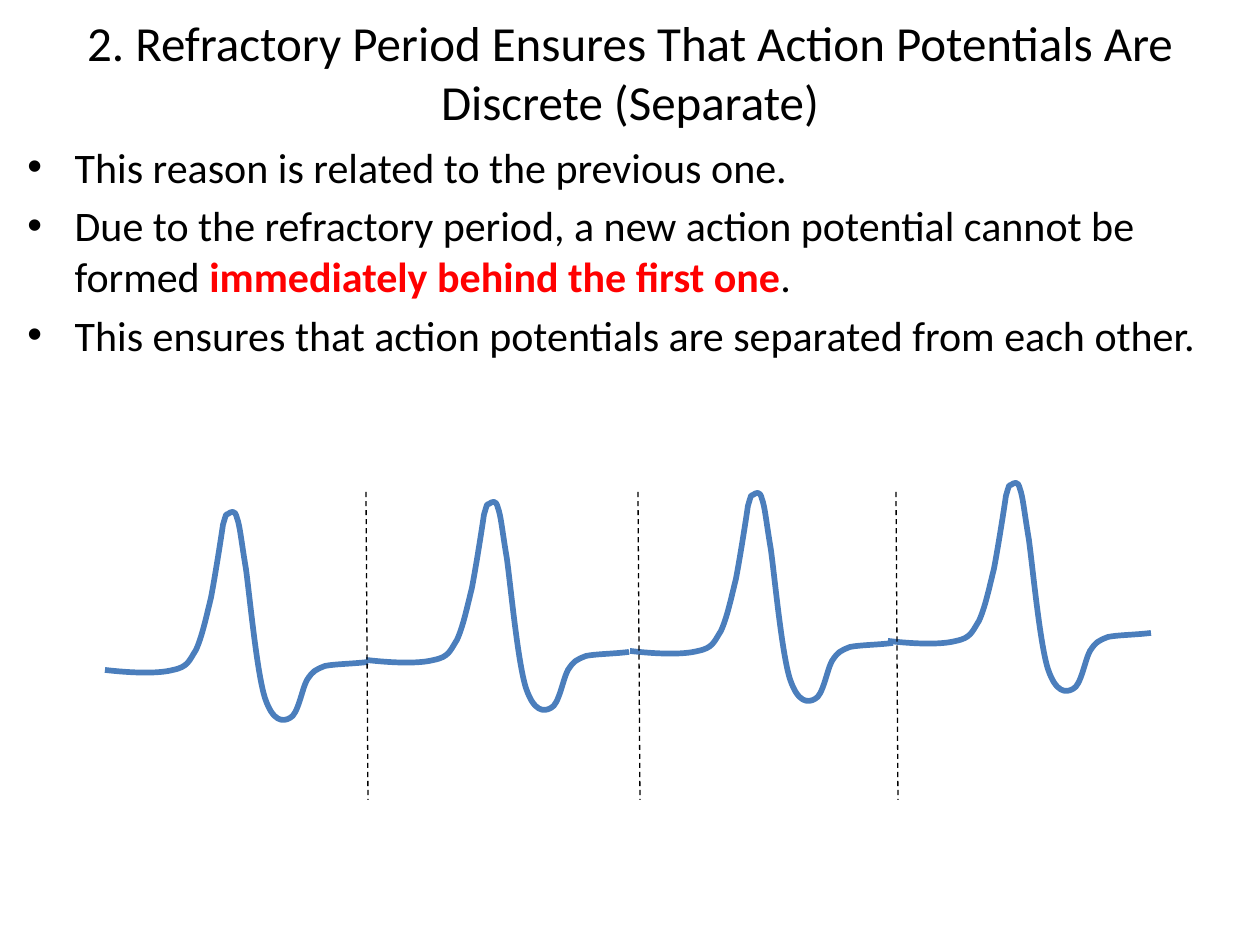
from lxml import etree
from pptx import Presentation
from pptx import util as u
from pptx.dml.color import RGBColor
from pptx.enum import dml, shapes, text
from pptx.oxml.ns import qn

PX = 914400 / 126
COLORS = {"text": "000000", "accent": "FF0000", "wave": "4B7EBC"}
FONT = "Calibri"

TITLE = "2. Refractory Period Ensures That Action Potentials Are Discrete (Separate)"
BULLETS = [
    [("This reason is related to the previous one.", False)],
    [("Due to the refractory period, a new action potential cannot be formed ", False),
     ("immediately behind the first one", True),
     (".", False)],
    [("This ensures that action potentials are separated from each other.", False)],
]

# Bezier triples (two controls, one end) in px from the start of a wave
WAVE_CURVES = [
    [(26, 3), (53, 4), (68, 0)],
    [(83, -3), (84, -9), (91, -20)],
    [(97, -33), (101, -52), (106, -72)],
    [(110, -93), (116, -131), (118, -145)],
    [(122, -159), (121, -155), (123, -156)],
    [(126, -158), (130, -161), (132, -152)],
    [(135, -144), (136, -131), (141, -101)],
    [(145, -71), (152, 3), (160, 28)],
    [(168, 52), (178, 52), (185, 48)],
    [(193, 45), (197, 19), (202, 10)],
    [(208, 1), (210, 0), (220, -4)],
    [(230, -6), (247, -6), (263, -8)],
]
WAVE_STARTS = [(0, 178), (261, 168), (525, 159), (783, 149)]
DIVIDER_LEFTS = [261, 533, 791]


def px(length):
    return u.Emu(round(length * PX))


def color(name):
    return RGBColor.from_string(COLORS[name])


def set_all(target, values):
    for name, value in values.items():
        setattr(target, name, value)


def add_text_frame(page, box, anchor):
    frame = page.shapes.add_textbox(*map(px, box)).text_frame
    set_all(frame, {"word_wrap": True, "vertical_anchor": anchor})
    return frame


def add_span(para, words, size, accent=False):
    span = para.add_run()
    span.text = words
    set_all(span.font, {"name": FONT, "size": u.Pt(size), "bold": accent})
    span.font.color.rgb = color("accent" if accent else "text")


def add_title(page, box):
    para = add_text_frame(page, box, text.MSO_ANCHOR.MIDDLE).paragraphs[0]
    para.alignment = text.PP_ALIGN.CENTER
    add_span(para, TITLE, 28)


def add_bullets(page, box):
    frame = add_text_frame(page, box, text.MSO_ANCHOR.TOP)
    for index, spans in enumerate(BULLETS):
        para = frame.add_paragraph() if index else frame.paragraphs[0]
        para.space_before = u.Pt(4.8)
        props = para._p.get_or_add_pPr()
        props.set("marL", str(u.Inches(0.375)))
        props.set("indent", str(-u.Inches(0.375)))
        etree.SubElement(props, qn("a:buFont"), typeface="Arial")
        etree.SubElement(props, qn("a:buChar"), char="•")
        for words, accent in spans:
            add_span(para, words, 24, accent)


def add_wave(page, left, top):
    """Draw one action potential as a smooth open outline."""
    points = [(left + x, top + y) for curve in WAVE_CURVES for x, y in curve]
    builder = page.shapes.build_freeform(left, top, scale=PX)
    wave = builder.add_line_segments(points, close=False).convert_to_shape()
    segments = list(wave._element.iter(qn("a:lnTo")))
    for first in range(0, len(segments), 3):
        curve = etree.Element(qn("a:cubicBezTo"))
        segments[first].addprevious(curve)
        for segment in segments[first:first + 3]:
            curve.append(segment[0])
            segment.getparent().remove(segment)
    wave.shadow.inherit = False
    wave.fill.background()
    wave.line.color.rgb = color("wave")
    wave.line.width = u.Pt(3.25)


def add_divider(page, left, top, height):
    ends = map(px, (left, top, left + 2, top + height))
    divider = page.shapes.add_connector(shapes.MSO_CONNECTOR.STRAIGHT, *ends)
    divider.line.color.rgb = color("text")
    set_all(divider.line, {"width": u.Pt(0.75), "dash_style": dml.MSO_LINE.DASH})
    etree.SubElement(divider._element.spPr, qn("a:effectLst"))


def add_wave_train(page, box):
    left, top, _, height = box
    for x, y in WAVE_STARTS:
        add_wave(page, left + x, top + y)
    for x in DIVIDER_LEFTS:
        add_divider(page, left + x, top, height)


def main():
    deck = Presentation()
    set_all(deck, {"slide_width": px(1260), "slide_height": px(945)})
    page = deck.slides.add_slide(deck.slide_layouts[6])
    add_title(page, (15, 16, 1230, 110))
    add_bullets(page, (15, 135, 1230, 794))
    add_wave_train(page, (105, 492, 1047, 308))
    deck.save("out.pptx")


if __name__ == "__main__":
    main()
